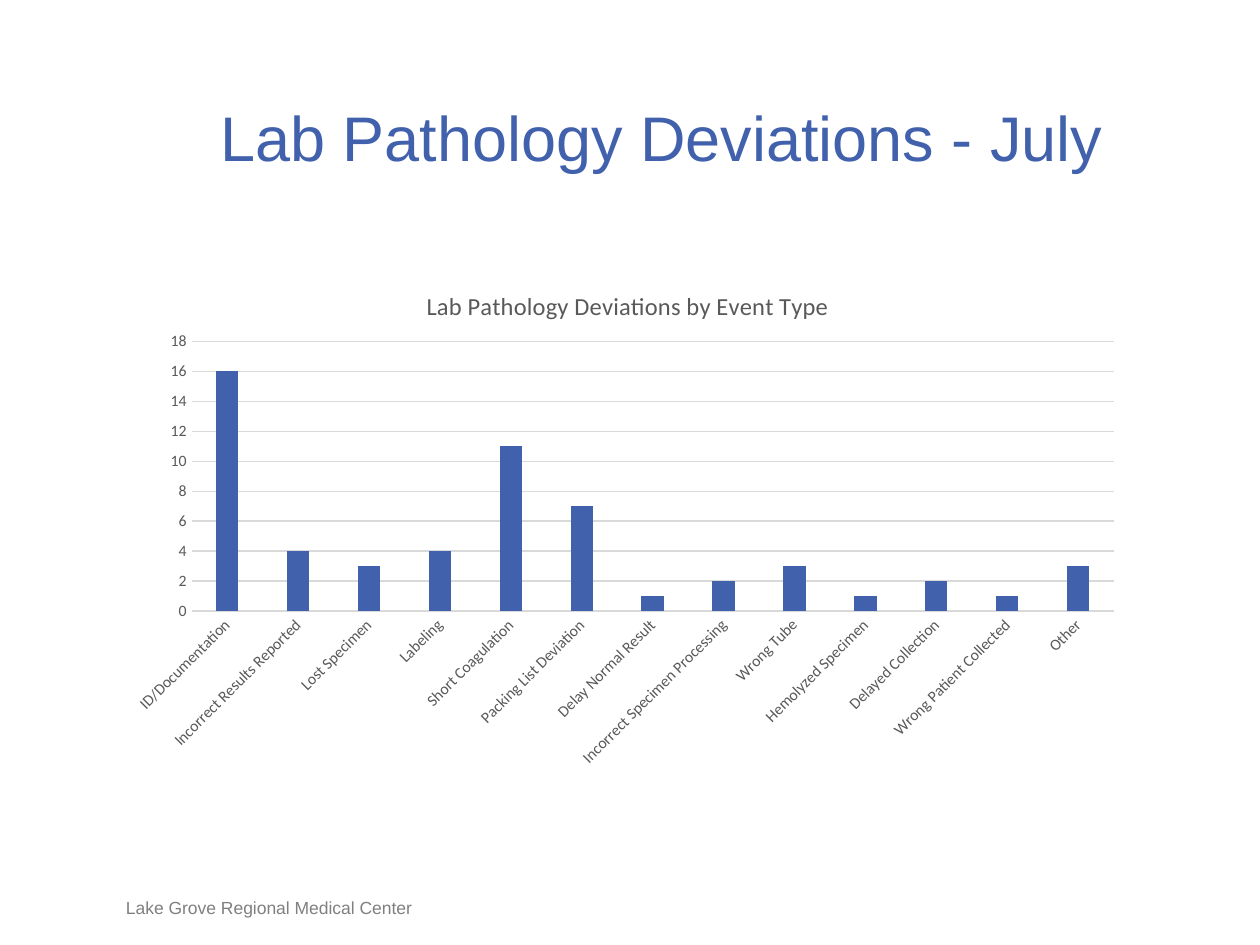
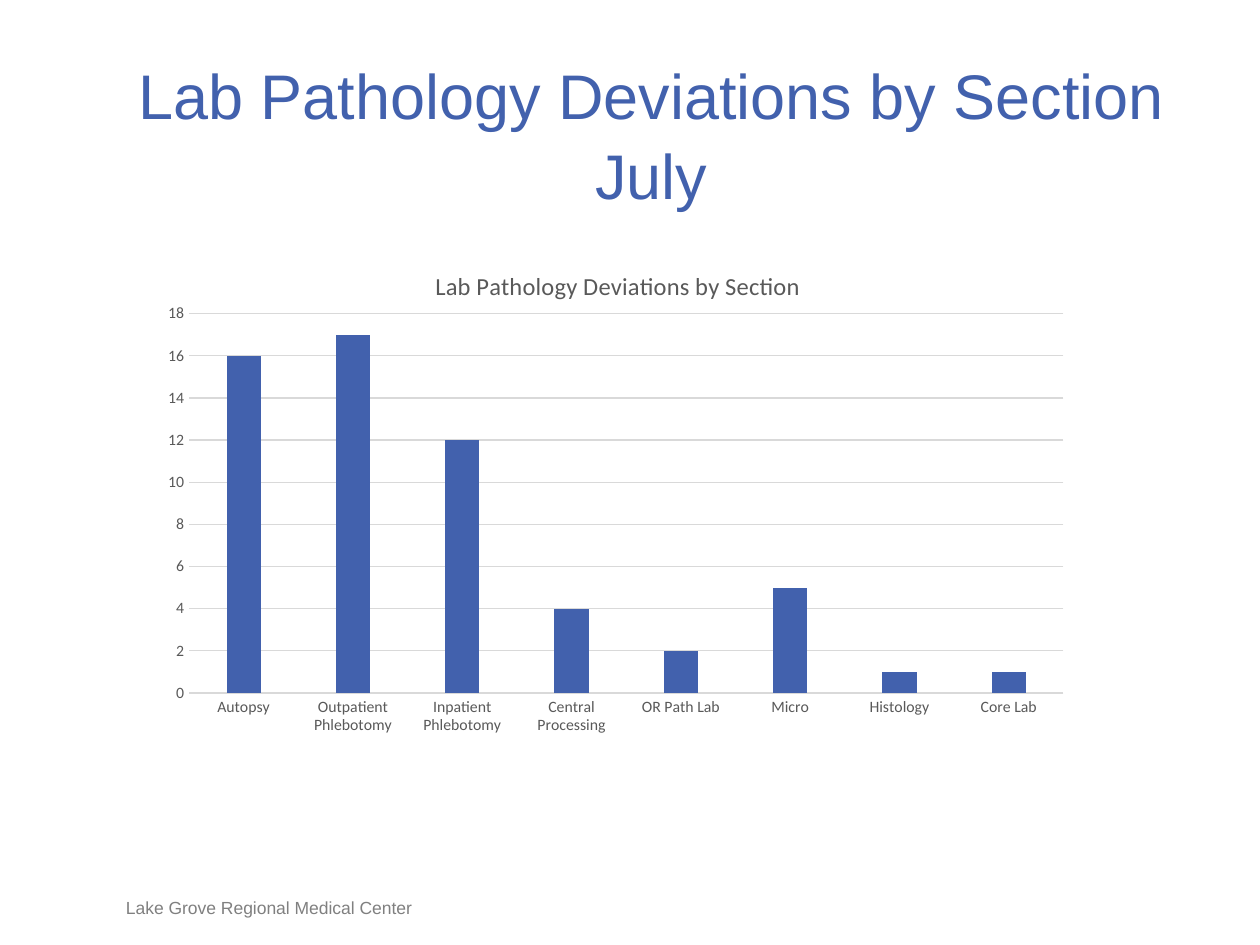
from dataclasses import dataclass

from lxml.etree import SubElement
from pptx import Presentation
from pptx.chart.data import CategoryChartData
from pptx.dml.color import RGBColor
from pptx.enum.chart import XL_CHART_TYPE, XL_TICK_MARK
from pptx.enum.text import MSO_ANCHOR, MSO_AUTO_SIZE, PP_ALIGN
from pptx.oxml.ns import qn
from pptx.util import Pt

EMU_PER_PX = 9144  # 100 px to the inch


@dataclass(frozen=True)
class Theme:
    blue: str = "4261AD"
    footer_grey: str = "808080"
    chart_text: str = "595959"
    chart_line: str = "D9D9D9"
    text_font: str = "Arial"
    chart_font: str = "Calibri"
    title_size: int = 36
    chart_title_size: int = 14
    footer_size: int = 10
    axis_size: int = 9
    line_width: float = 0.75


THEME = Theme()
FOOTER = "Lake Grove Regional Medical Center"

DEVIATIONS_BY_EVENT = {
    "ID/Documentation": 16,
    "Incorrect Results Reported": 4,
    "Lost Specimen": 3,
    "Labeling": 4,
    "Short Coagulation": 11,
    "Packing List Deviation": 7,
    "Delay Normal Result": 1,
    "Incorrect Specimen Processing": 2,
    "Wrong Tube": 3,
    "Hemolyzed Specimen": 1,
    "Delayed Collection": 2,
    "Wrong Patient Collected": 1,
    "Other": 3,
}

DEVIATIONS_BY_SECTION = {
    "Autopsy": 16,
    "Outpatient Phlebotomy": 17,
    "Inpatient Phlebotomy": 12,
    "Central Processing": 4,
    "OR Path Lab": 2,
    "Micro": 5,
    "Histology": 1,
    "Core Lab": 1,
}


def px(*lengths):
    return [length * EMU_PER_PX for length in lengths]


def set_font(font, name, size, color):
    font.name = name
    font.size = Pt(size)
    font.bold = False
    font.color.rgb = RGBColor.from_string(color)


def write_text(frame, text, *, size, color, font=THEME.text_font,
               align=PP_ALIGN.LEFT, line_spacing=None):
    para = frame.paragraphs[0]
    para.alignment = align
    para.line_spacing = line_spacing
    span = para.add_run()
    span.text = text
    set_font(span.font, font, size, color)


def fit_frame(frame, anchor):
    """Wrap the text, drop the insets and let the box grow with its text."""
    frame.word_wrap = True
    frame.auto_size = MSO_AUTO_SIZE.SHAPE_TO_FIT_TEXT
    frame.vertical_anchor = anchor
    frame.margin_left = frame.margin_top = 0
    frame.margin_right = frame.margin_bottom = 0


def add_titled_page(deck, title, area):
    page = deck.slides.add_slide(deck.slide_layouts[5])
    box = page.shapes.title
    box.left, box.top, box.width, box.height = px(*area)
    fit_frame(box.text_frame, MSO_ANCHOR.TOP)
    write_text(box.text_frame, title, size=THEME.title_size, color=THEME.blue,
               align=PP_ALIGN.CENTER, line_spacing=1.05)
    add_footer(page)
    return page


def add_footer(page):
    box = page.shapes.add_textbox(*px(100, 712, 317, 17))
    fit_frame(box.text_frame, MSO_ANCHOR.BOTTOM)
    write_text(box.text_frame, FOOTER, size=THEME.footer_size,
               color=THEME.footer_grey)


def place_chart_part(part, index, **settings):
    """Give a chart title or plot area a manual layout as child number index."""
    for old_layout in part.findall(qn("c:layout")):
        part.remove(old_layout)
    layout = SubElement(part, qn("c:layout"))
    part.insert(index, layout)
    manual = SubElement(layout, qn("c:manualLayout"))
    for tag, value in settings.items():
        SubElement(manual, qn(f"c:{tag}")).set("val", str(value))


def format_line(line):
    line.color.rgb = RGBColor.from_string(THEME.chart_line)
    line.width = Pt(THEME.line_width)


def format_axes(chart, label_angle):
    for axis in (chart.category_axis, chart.value_axis):
        axis.major_tick_mark = axis.minor_tick_mark = XL_TICK_MARK.NONE
        set_font(axis.tick_labels.font, THEME.chart_font, THEME.axis_size,
                 THEME.chart_text)
    format_line(chart.category_axis.format.line)
    if label_angle:
        body = chart.category_axis._element.find(
            f"{qn('c:txPr')}/{qn('a:bodyPr')}")
        body.set("rot", str(label_angle * 60000))
        body.set("vert", "horz")
    values = chart.value_axis
    values.minimum_scale, values.maximum_scale, values.major_unit = 0, 18, 2
    values.format.line.fill.background()
    format_line(values.major_gridlines.format.line)


def add_column_chart(page, title, counts, area, title_at, plot_area,
                     label_angle=0):
    """Add a column chart; title_at and plot_area are px inside the chart."""
    data = CategoryChartData()
    data.categories = list(counts)
    data.add_series("Series 1", list(counts.values()))
    chart = page.shapes.add_chart(
        XL_CHART_TYPE.COLUMN_CLUSTERED, *px(*area), data).chart
    chart.has_legend = False
    set_font(chart.font, THEME.chart_font, 10, "000000")

    chart.has_title = True
    write_text(chart.chart_title.text_frame, title,
               size=THEME.chart_title_size, color=THEME.chart_text,
               font=THEME.chart_font, align=PP_ALIGN.CENTER)
    chart.chart_title.include_in_layout = False

    width, height = area[2:]
    left, top = title_at
    place_chart_part(chart.chart_title._element, 1, xMode="edge", yMode="edge",
                     x=left / width, y=top / height)
    left, top, plot_width, plot_height = plot_area
    place_chart_part(chart._chartSpace.chart.plotArea, 0, layoutTarget="inner",
                     xMode="edge", yMode="edge", x=left / width,
                     y=top / height, w=plot_width / width,
                     h=plot_height / height)

    plot = chart.plots[0]
    plot.vary_by_categories = False
    plot.gap_width = 219
    plot.overlap = -27
    fill = plot.series[0].format.fill
    fill.solid()
    fill.fore_color.rgb = RGBColor.from_string(THEME.blue)
    format_axes(chart, label_angle)


def main():
    deck = Presentation()
    deck.slide_width, deck.slide_height = px(1000, 750)

    page = add_titled_page(deck, "Lab Pathology Deviations - July",
                           (100, 75, 850, 61))
    add_column_chart(page, "Lab Pathology Deviations by Event Type",
                     DEVIATIONS_BY_EVENT, area=(92, 208, 808, 410),
                     title_at=(243, 18), plot_area=(60, 63, 732, 214),
                     label_angle=-45)

    page = add_titled_page(deck, "Lab Pathology Deviations by Section July",
                           (92, 42, 850, 121))
    add_column_chart(page, "Lab Pathology Deviations by Section",
                     DEVIATIONS_BY_SECTION, area=(117, 192, 742, 400),
                     title_at=(225, 18), plot_area=(33, 57, 694, 301))

    deck.save("out.pptx")


if __name__ == "__main__":
    main()
